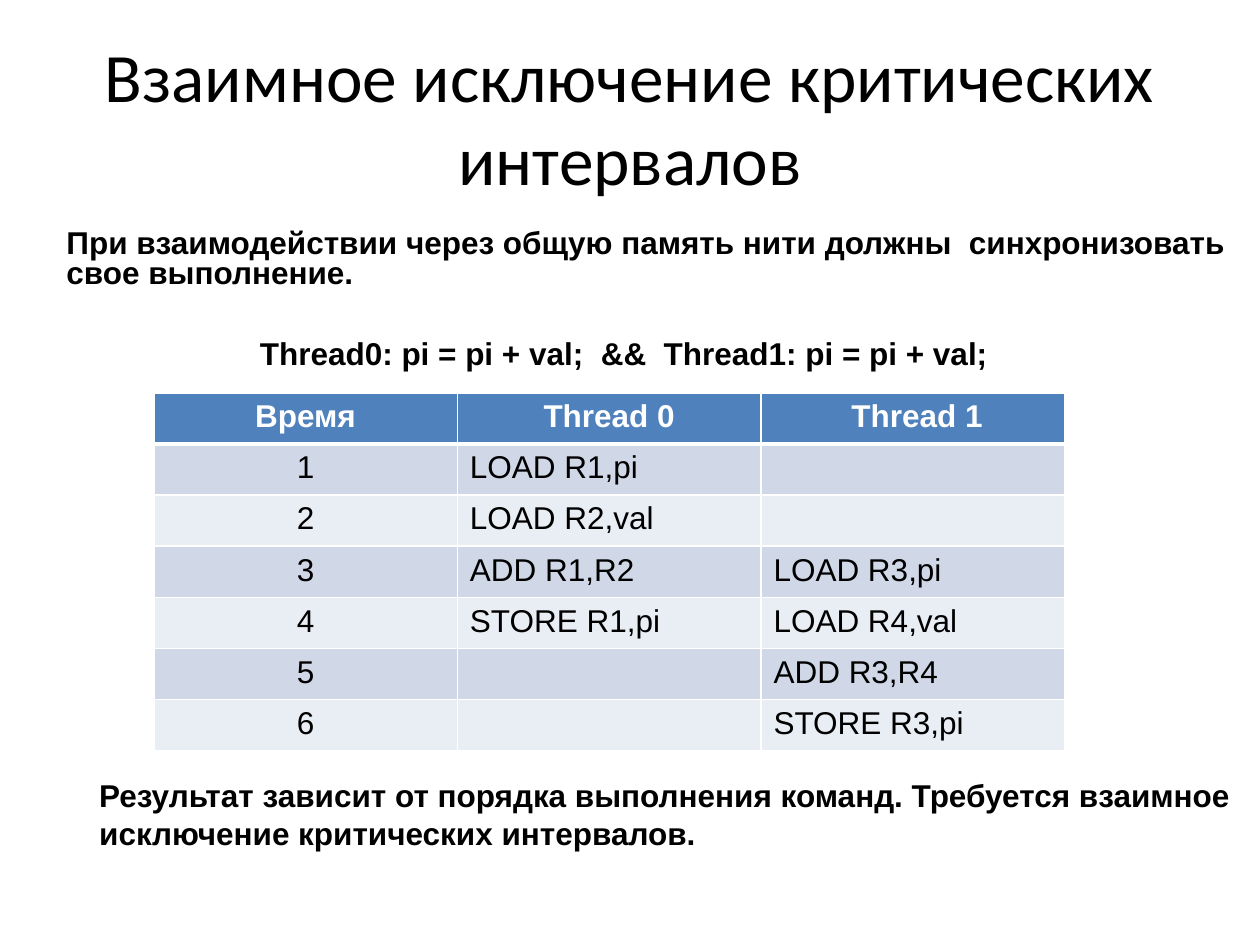
from dataclasses import dataclass, field

from lxml.etree import SubElement
from pptx import Presentation
from pptx.dml.color import RGBColor as Rgb
from pptx.enum.text import MSO_ANCHOR as Anchor, PP_ALIGN as Align
from pptx.oxml.ns import qn
from pptx.util import Cm, Pt


@dataclass(frozen=True)
class Theme:
    ink: Rgb = Rgb(0x00, 0x00, 0x00)
    paper: Rgb = Rgb(0xFF, 0xFF, 0xFF)
    header: Rgb = Rgb(0x4F, 0x81, 0xBD)
    bands: tuple = (Rgb(0xD0, 0xD8, 0xE8), Rgb(0xE9, 0xED, 0xF4))
    title_font: str = "Calibri"
    body_font: str = "Arial"
    title_size: float = 39.6
    body_size: float = 18
    thin_rule: float = 1
    thick_rule: float = 3


THEME = Theme()
TITLE_FONT = {"name": THEME.title_font, "size": Pt(THEME.title_size), "bold": False}
BODY_FONT = {"name": THEME.body_font, "size": Pt(THEME.body_size), "bold": False}
STRONG_FONT = BODY_FONT | {"bold": True}


@dataclass(frozen=True)
class Line:
    text: str
    font: dict
    layout: dict = field(default_factory=dict)
    indent: float = 0


@dataclass(frozen=True)
class Block:
    left: float
    top: float
    width: float
    height: float
    lines: tuple
    anchor: Anchor = Anchor.TOP


TIGHT = {"line_spacing": 0.8, "space_before": Pt(6)}
BLOCKS = (
    Block(1.27, 0.76, 22.86, 3.18, (
        Line("Взаимное исключение критических интервалов", TITLE_FONT,
             {"alignment": Align.CENTER}),
    ), Anchor.MIDDLE),
    Block(1.09, 4.52, 25.4, 14.6, (
        Line("При взаимодействии через общую память нити должны  "
             "синхронизовать свое выполнение.", STRONG_FONT, TIGHT),
        Line("Thread0: pi = pi + val;  &&  Thread1: pi = pi + val;",
             STRONG_FONT, TIGHT | {"space_before": Pt(29)}, indent=3.9),
    )),
    Block(1.75, 15.52, 24.28, 1.78, (
        Line("Результат зависит от порядка выполнения команд. Требуется "
             "взаимное исключение критических интервалов.",
             STRONG_FONT, {"space_before": Pt(6)}),
    )),
)

HEADINGS = ("Время", "Thread 0", " Thread 1")
THREAD_0 = ("LOAD R1,pi", "LOAD R2,val", "ADD R1,R2", "STORE R1,pi", "", "")
THREAD_1 = ("", "", "LOAD R3,pi", "LOAD R4,val", "ADD R3,R4", "STORE R3,pi")
COLUMN_WIDTH, ROW_HEIGHT = 6.12, 1.03


def apply(target: object, values: dict) -> None:
    for attribute, value in values.items():
        setattr(target, attribute, value)


def write_line(paragraph, line: Line, color: Rgb = THEME.ink) -> None:
    apply(paragraph, line.layout)
    if line.indent:
        paragraph._p.get_or_add_pPr().set("marL", str(Cm(line.indent)))
    apply(paragraph.font, line.font)
    if line.text:
        run = paragraph.add_run()
        run.text = line.text
        apply(run.font, line.font)
        run.font.color.rgb = color


def draw_block(slide, block: Block) -> None:
    box = slide.shapes.add_textbox(
        Cm(block.left), Cm(block.top), Cm(block.width), Cm(block.height))
    frame = box.text_frame
    apply(frame, {"word_wrap": True, "vertical_anchor": block.anchor})
    for index, line in enumerate(block.lines):
        paragraph = frame.add_paragraph() if index else frame.paragraphs[0]
        write_line(paragraph, line)


def rule_cell(cell, widths: dict) -> None:
    """Draw the cell's borders; they must come before its fill in the XML."""
    properties = cell._tc.get_or_add_tcPr()
    for side, width in widths.items():
        border = SubElement(properties, qn(f"a:{side}"), w=str(Pt(width)))
        fill = SubElement(border, qn("a:solidFill"))
        SubElement(fill, qn("a:srgbClr"), val=str(THEME.paper))


def draw_schedule(slide) -> None:
    """Draw the table of commands that the two threads run at each step."""
    steps = [(str(number), *commands)
             for number, commands in enumerate(zip(THREAD_0, THREAD_1), start=1)]
    rows = [HEADINGS, *steps]
    table = slide.shapes.add_table(
        len(rows), len(HEADINGS), Cm(3.1), Cm(7.92),
        Cm(COLUMN_WIDTH * len(HEADINGS)), Cm(ROW_HEIGHT * len(rows))).table
    for column in table.columns:
        column.width = Cm(COLUMN_WIDTH)
    for r, texts in enumerate(rows):
        table.rows[r].height = Cm(ROW_HEIGHT)
        is_header = r == 0
        background = THEME.header if is_header else THEME.bands[(r - 1) % 2]
        widths = dict.fromkeys(("lnL", "lnR", "lnT", "lnB"), THEME.thin_rule)
        if r < 2:
            widths["lnB" if is_header else "lnT"] = THEME.thick_rule
        for c, text in enumerate(texts):
            cell = table.cell(r, c)
            rule_cell(cell, widths)
            cell.fill.solid()
            cell.fill.fore_color.rgb = background
            centred = is_header or c == 0
            line = Line(text, STRONG_FONT if is_header else BODY_FONT,
                        {"alignment": Align.CENTER if centred else Align.LEFT})
            write_line(cell.text_frame.paragraphs[0], line,
                       THEME.paper if is_header else THEME.ink)


def main() -> None:
    deck = Presentation()
    apply(deck, {"slide_width": Cm(25.4), "slide_height": Cm(19.05)})
    slide = deck.slides.add_slide(deck.slide_layouts[6])
    title, introduction, conclusion = BLOCKS
    draw_block(slide, title)
    draw_block(slide, introduction)
    draw_schedule(slide)
    draw_block(slide, conclusion)
    deck.save("out.pptx")


if __name__ == "__main__":
    main()
